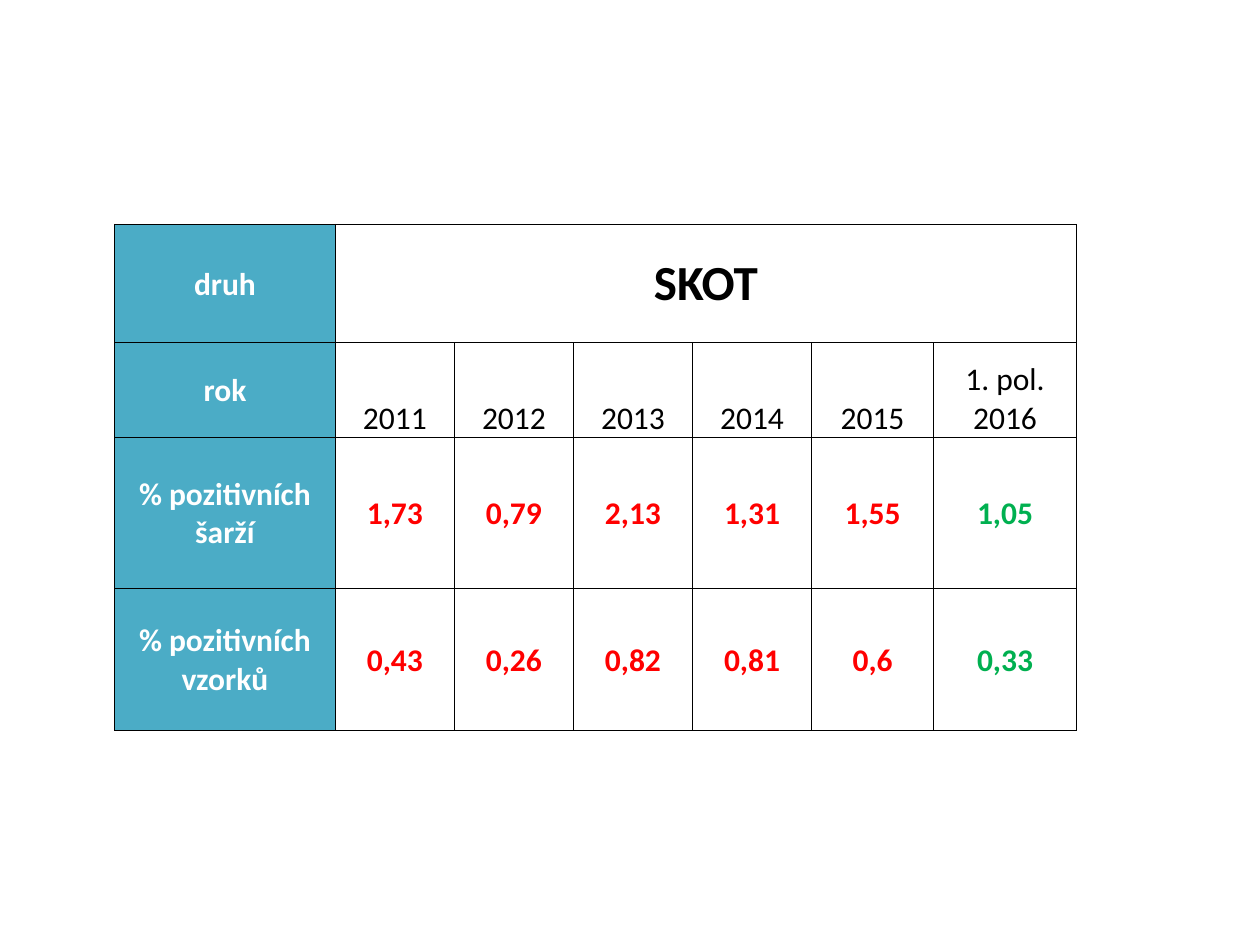
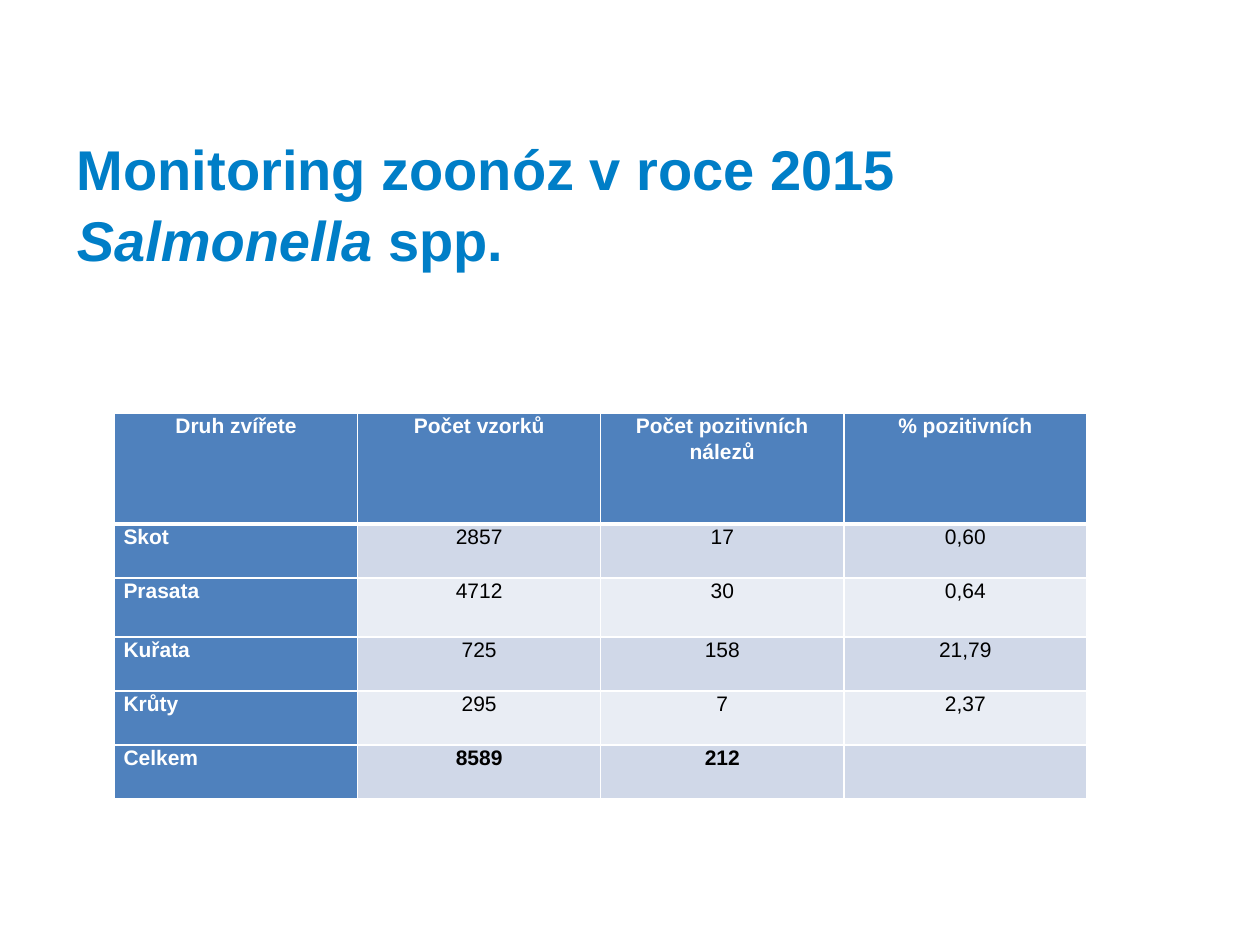
from lxml import etree
from pptx import Presentation, util as u
from pptx.dml.color import RGBColor
from pptx.enum import text
from pptx.oxml.ns import qn

WHITE = RGBColor(0xFF, 0xFF, 0xFF)
BLACK = RGBColor(0, 0, 0)
RED = RGBColor(0xFF, 0, 0)
GREEN = RGBColor(0, 0xB0, 0x50)
TEAL = RGBColor(0x4B, 0xAC, 0xC6)
BLUE = RGBColor(0x4F, 0x81, 0xBD)
TITLE_BLUE = RGBColor(0, 0x7E, 0xC7)
BANDS = [RGBColor(0xD0, 0xD8, 0xE8), RGBColor(0xE9, 0xED, 0xF4)]

CENTER, LEFT = text.PP_ALIGN.CENTER, text.PP_ALIGN.LEFT
TOP, MIDDLE, BOTTOM = text.MSO_ANCHOR.TOP, text.MSO_ANCHOR.MIDDLE, text.MSO_ANCHOR.BOTTOM
TABLE_LEFT = 2.31

CATTLE = [
    ["druh", "SKOT", "", "", "", "", ""],
    ["rok", "2011", "2012", "2013", "2014", "2015", "1. pol. 2016"],
    ["% pozitivních šarží", "1,73", "0,79", "2,13", "1,31", "1,55", "1,05"],
    ["% pozitivních vzorků", "0,43", "0,26", "0,82", "0,81", "0,6", "0,33"],
]
CATTLE_COLS = [4.45] + [2.4] * 4 + [2.46, 2.88]
CATTLE_ROWS = [2.39, 1.91, 3.04, 2.87]

TITLE = [
    [("Monitoring zoonóz v roce 2015", False)],
    [("Salmonella ", True), ("spp.", False)],
]
SALMONELLA = [
    ["Druh zvířete", "Počet vzorků", "Počet pozitivních nálezů", "% pozitivních"],
    ["Skot", "2857", "17", "0,60"],
    ["Prasata", "4712", "30", "0,64"],
    ["Kuřata", "725", "158", "21,79"],
    ["Krůty", "295", "7", "2,37"],
    ["Celkem", "8589", "212", ""],
]
SALMONELLA_COLS = [4.9] * 4
SALMONELLA_ROWS = [2.23, 1.09, 1.19, 1.09, 1.09, 1.09]


def add_run(p, words, font, size, color, bold, italic=False):
    r = p.add_run()
    r.text = words
    r.font.name, r.font.size = font, u.Pt(size)
    r.font.bold, r.font.italic = bold, italic
    r.font.color.rgb = color


def set_borders(cell, color, widths):
    tcPr = cell._tc.get_or_add_tcPr()
    for i, (side, width) in enumerate(zip("LRTB", widths)):
        ln = etree.Element(qn(f"a:ln{side}"), w=str(u.Pt(width)))
        fill = etree.SubElement(ln, qn("a:solidFill"))
        etree.SubElement(fill, qn("a:srgbClr"), val=str(color))
        tcPr.insert(i, ln)


def add_table(s, top, rows, cols, heights, font, size, insets, line_spacing, style):
    frame = s.shapes.add_table(len(rows), len(cols), u.Cm(TABLE_LEFT), u.Cm(top),
                               u.Cm(sum(cols)), u.Cm(sum(heights)))
    table = frame.table
    table.first_row = table.horz_banding = False
    for column, width in zip(table.columns, cols):
        column.width = u.Cm(width)
    for row, height in zip(table.rows, heights):
        row.height = u.Cm(height)
    for i, row in enumerate(rows):
        for j, words in enumerate(row):
            look = style(i, j)
            cell = table.cell(i, j)
            cell.fill.solid()
            cell.fill.fore_color.rgb = look["fill"]
            cell.vertical_anchor = look["anchor"]
            (cell.margin_left, cell.margin_top,
             cell.margin_right, cell.margin_bottom) = map(u.Cm, insets)
            set_borders(cell, *look["border"])
            p = cell.text_frame.paragraphs[0]
            p.alignment = look["align"]
            p.line_spacing = line_spacing
            if words:
                add_run(p, words, font, look.get("size", size), look["color"], look["bold"])
    return table


def cattle_style(i, j):
    look = dict(fill=WHITE, anchor=MIDDLE, align=CENTER, color=BLACK, bold=True,
                border=(BLACK, [0.5] * 4))
    if j == 0:
        look.update(fill=TEAL, color=WHITE)
    elif i == 0:
        look.update(size=28)
    elif i == 1:
        look.update(anchor=BOTTOM, bold=False)
    else:
        look.update(color=GREEN if j == len(CATTLE_COLS) - 1 else RED)
    return look


def salmonella_style(i, j):
    heading = i == 0 or j == 0
    return dict(fill=BLUE if heading else BANDS[(i - 1) % 2],
                color=WHITE if heading else BLACK,
                bold=heading or i == len(SALMONELLA) - 1,
                anchor=TOP, align=LEFT if j == 0 and i else CENTER,
                border=(WHITE, [1, 1, 3 if i == 1 else 1, 3 if i == 0 else 1]))


def add_title(s):
    tf = s.shapes.add_textbox(u.Cm(1.3), u.Cm(2.51), u.Cm(22.83), u.Cm(3)).text_frame
    tf.word_wrap = True
    for i, runs in enumerate(TITLE):
        p = tf.add_paragraph() if i else tf.paragraphs[0]
        p.line_spacing = 1.06
        for words, italic in runs:
            add_run(p, words, "Arial", 32, TITLE_BLUE, True, italic)


def main():
    prs = Presentation()
    prs.slide_width, prs.slide_height = u.Cm(25.4), u.Cm(19.05)
    blank = prs.slide_layouts[6]

    s = prs.slides.add_slide(blank)
    table = add_table(s, 4.52, CATTLE, CATTLE_COLS, CATTLE_ROWS, "Calibri", 18,
                      (0.03, 0.03, 0.03, 0), 1.0, cattle_style)
    table.cell(0, 1).merge(table.cell(0, len(CATTLE_COLS) - 1))

    s = prs.slides.add_slide(blank)
    add_table(s, 8.33, SALMONELLA, SALMONELLA_COLS, SALMONELLA_ROWS, "Arial", 12,
              (0.18, 0, 0.18, 0), 1.07, salmonella_style)
    add_title(s)

    prs.save("out.pptx")


if __name__ == "__main__":
    main()
